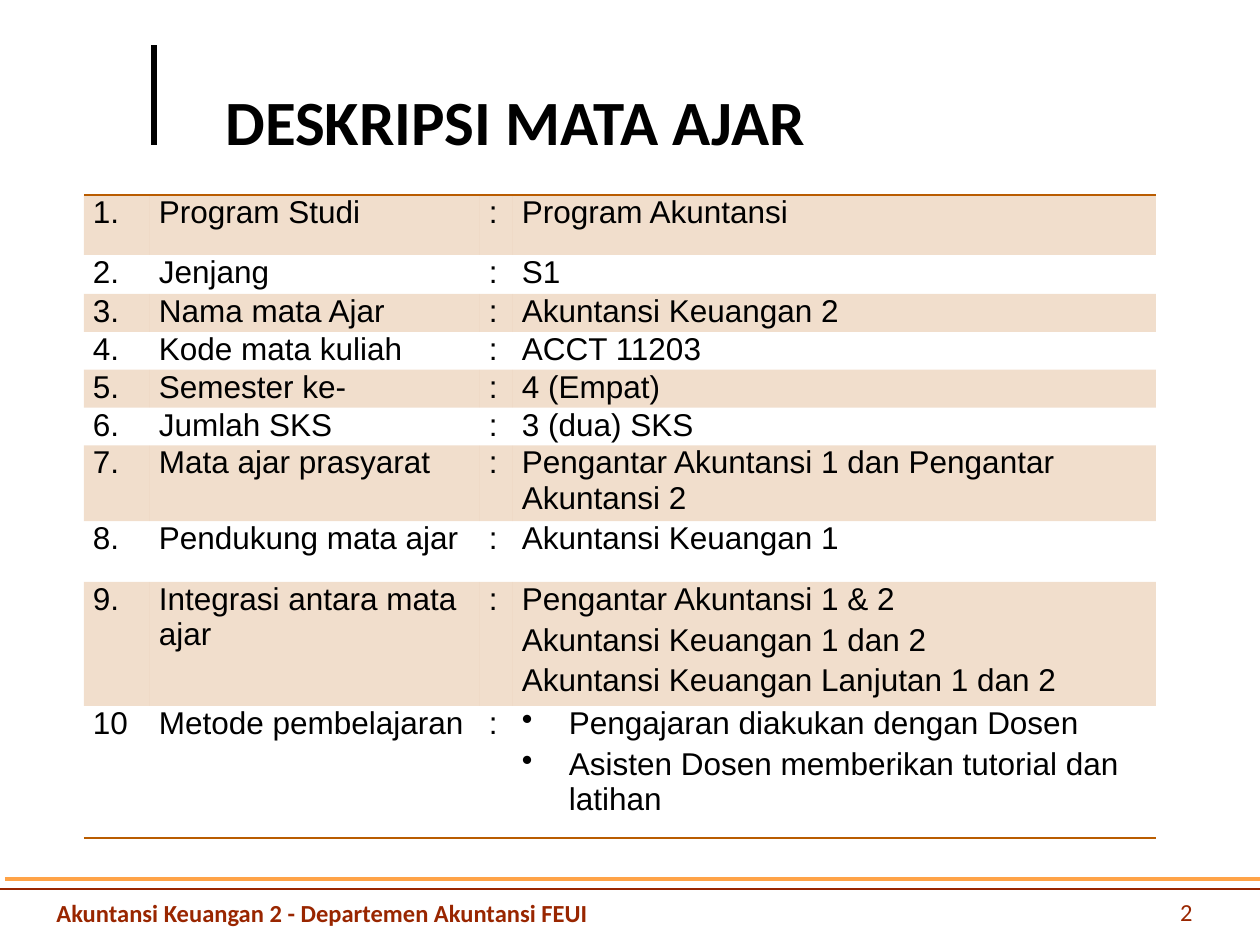
from lxml import etree
from pptx import Presentation
from pptx.dml.color import RGBColor
from pptx.enum.shapes import MSO_CONNECTOR
from pptx.enum.text import MSO_ANCHOR, PP_ALIGN
from pptx.oxml.ns import qn
from pptx.util import Pt

STRAIGHT = MSO_CONNECTOR.STRAIGHT
MIDDLE, BOTTOM = MSO_ANCHOR.MIDDLE, MSO_ANCHOR.BOTTOM
LEFT, RIGHT, JUSTIFY = PP_ALIGN.LEFT, PP_ALIGN.RIGHT, PP_ALIGN.JUSTIFY
EMU_PER_PX = 914400 / 126
NO_STYLE_NO_GRID = "{2D5ABB26-0587-4C30-8999-92F81FD0307C}"
COLORS = {"text": "000000", "footer": "992600", "accent": "FFA347", "band": "B95C00"}

COLUMN_WIDTHS = [66, 330, 33, 643]
COURSE_ROWS = [
    (60, "Program Studi", ["Program Akuntansi"]),
    (39, "Jenjang", ["S1"]),
    (35, "Nama mata Ajar", ["Akuntansi Keuangan 2"]),
    (35, "Kode mata kuliah", ["ACCT 11203"]),
    (35, "Semester ke-", ["4 (Empat)"]),
    (35, "Jumlah SKS", ["3 (dua) SKS"]),
    (71, "Mata ajar prasyarat", ["Pengantar Akuntansi 1 dan Pengantar Akuntansi 2"]),
    (61, "Pendukung mata ajar", ["Akuntansi Keuangan 1"]),
    (117, "Integrasi antara mata ajar", [
        "Pengantar Akuntansi 1 & 2",
        "Akuntansi Keuangan 1 dan 2",
        "Akuntansi Keuangan Lanjutan 1 dan 2",
    ]),
    (132, "Metode pembelajaran", [
        "Pengajaran diakukan dengan Dosen",
        "Asisten Dosen memberikan tutorial dan latihan",
    ]),
]


def px(length):
    return round(length * EMU_PER_PX)


def rgb(name):
    return RGBColor.from_string(COLORS[name])


class CourseSlide:
    def __init__(self, presentation):
        self.slide = presentation.slides.add_slide(presentation.slide_layouts[6])
        self.body = {"size": Pt(18), "name": "Arial"}

    def apply_font(self, paragraph, values, color):
        for attribute, value in values.items():
            setattr(paragraph.font, attribute, value)
        paragraph.font.color.rgb = rgb(color)

    def rule(self, start, end, color, width):
        line = self.slide.shapes.add_connector(
            STRAIGHT, *(px(value) for value in (*start, *end)))
        line.line.color.rgb = rgb(color)
        line.line.width = Pt(width)
        etree.SubElement(line._element.spPr, qn("a:effectLst"))

    def text(self, box, words, size, color, bold=True, anchor=BOTTOM, align=LEFT):
        frame = self.slide.shapes.add_textbox(*map(px, box)).text_frame
        frame.word_wrap = True
        frame.vertical_anchor = anchor
        paragraph = frame.paragraphs[0]
        paragraph.text = words
        paragraph.alignment = align
        self.apply_font(
            paragraph, {"size": Pt(size), "name": "Calibri", "bold": bold}, color)

    def bullet(self, paragraph, indent):
        properties = paragraph._p.get_or_add_pPr()
        properties.set("marL", str(px(indent)))
        properties.set("indent", str(-px(indent)))
        etree.SubElement(properties, qn("a:buChar"), char="•")

    def cell_border(self, cell, side):
        border = etree.Element(qn(f"a:{side}"), w=str(Pt(1)))
        fill = etree.SubElement(border, qn("a:solidFill"))
        etree.SubElement(fill, qn("a:srgbClr"), val=COLORS["band"])
        cell._tc.get_or_add_tcPr().insert(0, border)

    def cell_fill(self, cell, banded):
        if not banded:
            cell.fill.background()
            return
        cell.fill.solid()
        cell.fill.fore_color.rgb = rgb("band")
        shade = cell._tc.tcPr.find(f".//{qn('a:srgbClr')}")
        etree.SubElement(shade, qn("a:alpha"), val="20000")

    def cell(self, cell, lines, banded, align=LEFT, bulleted=False):
        margins = {"margin_left": 9, "margin_right": 9, "margin_top": 0, "margin_bottom": 0}
        for attribute, value in margins.items():
            setattr(cell, attribute, px(value))
        self.cell_fill(cell, banded)
        frame = cell.text_frame
        for index, line in enumerate(lines):
            paragraph = frame.add_paragraph() if index else frame.paragraphs[0]
            paragraph.text = line
            paragraph.alignment = align
            if index:
                paragraph.space_before = Pt(3)
            if bulleted:
                self.bullet(paragraph, 47)
            self.apply_font(paragraph, self.body, "text")

    def course_table(self, left, top, widths, rows):
        heights = [height for height, _, _ in rows]
        table = self.slide.shapes.add_table(
            len(rows), len(widths), px(left), px(top),
            px(sum(widths)), px(sum(heights))).table
        table.first_row = table.horz_banding = False
        table._tbl.tblPr.find(qn("a:tableStyleId")).text = NO_STYLE_NO_GRID
        for column, width in zip(table.columns, widths):
            column.width = px(width)
        last = len(rows) - 1
        for index, (height, label, details) in enumerate(rows):
            table.rows[index].height = px(height)
            number = f"{index + 1}" if index == last else f"{index + 1}."
            for column, lines in enumerate([[number], [label], [":"], details]):
                self.cell(
                    table.cell(index, column), lines, banded=index % 2 == 0,
                    align=JUSTIFY if column == 2 else LEFT,
                    bulleted=index == last and column == 3)
        for column in range(len(widths)):
            self.cell_border(table.cell(0, column), "lnT")
            self.cell_border(table.cell(last, column), "lnB")


def main():
    presentation = Presentation()
    presentation.slide_width, presentation.slide_height = px(1260), px(945)
    course = CourseSlide(presentation)
    course.rule((154, 145), (154, 45), "text", 3)
    course.rule((0, 889), (1260, 889), "footer", 1.25)
    course.rule((5, 879), (1265, 879), "accent", 2.25)
    course.text((213, 54, 984, 132), "DESKRIPSI MATA AJAR", 36, "text", anchor=MIDDLE)
    course.course_table(84, 195, COLUMN_WIDTHS, COURSE_ROWS)
    course.text((44, 871, 775, 63), "Akuntansi Keuangan 2 - Departemen Akuntansi FEUI",
                14, "footer")
    course.text((911, 870, 294, 63), "2", 14, "footer", bold=False, align=RIGHT)
    presentation.save("out.pptx")


if __name__ == "__main__":
    main()
